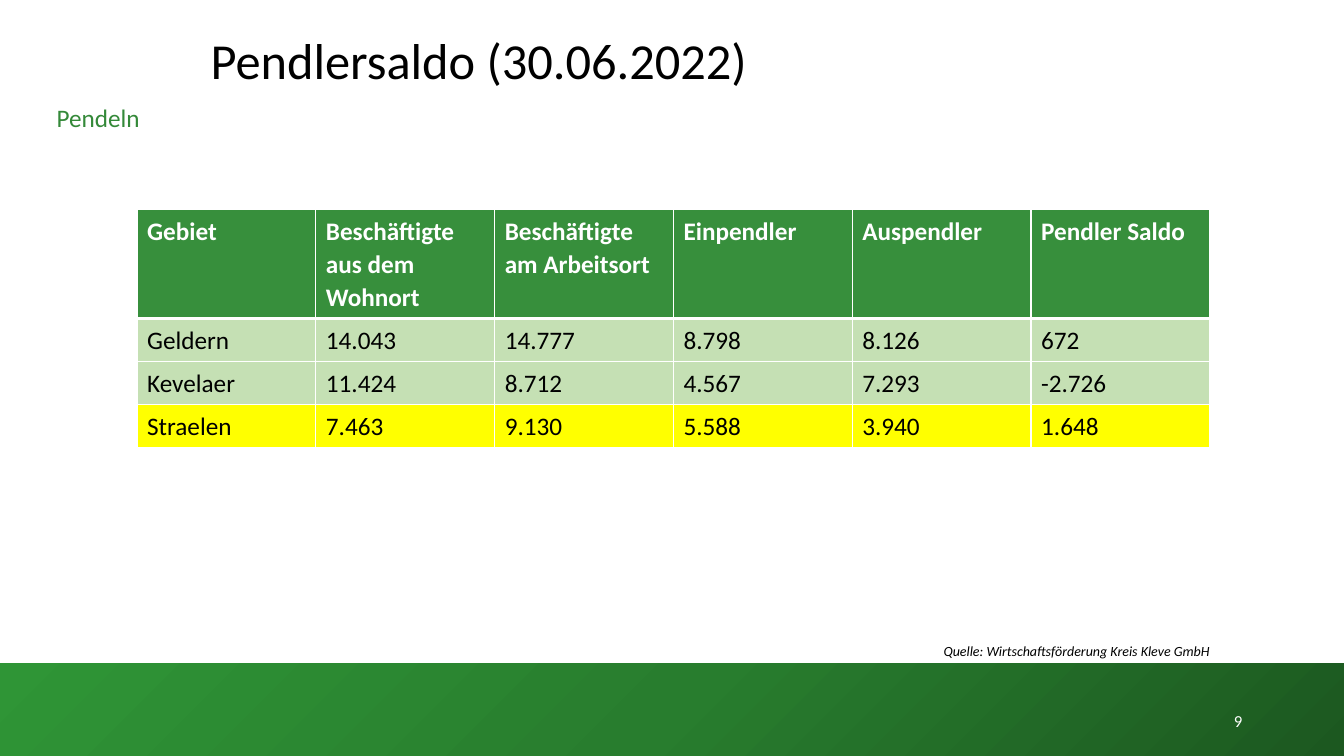
from dataclasses import dataclass
from copy import deepcopy

from lxml import etree
from pptx import Presentation
from pptx.dml.color import RGBColor
from pptx.enum.shapes import MSO_SHAPE
from pptx.enum.text import MSO_ANCHOR, PP_ALIGN
from pptx.oxml.ns import qn
from pptx.util import Inches, Pt

RECT = MSO_SHAPE.RECTANGLE
TOP, MIDDLE = MSO_ANCHOR.TOP, MSO_ANCHOR.MIDDLE
LEFT, CENTER, RIGHT = PP_ALIGN.LEFT, PP_ALIGN.CENTER, PP_ALIGN.RIGHT

FONT = "Calibri"
BLACK, WHITE = "000000", "FFFFFF"
HEAD, PALE, MARK = "378F3C", "C5E0B4", "FFFF00"


@dataclass
class Label:
    text: str
    box: tuple[float, float, float, float]
    size: float
    color: str = BLACK
    align: PP_ALIGN = LEFT
    anchor: MSO_ANCHOR = TOP
    italic: bool = False
    space: float = 1.0


@dataclass
class Row:
    cells: list[str]
    fill: str
    height: float = 0.42
    color: str = BLACK
    bold: bool = False


STOPS = [(0, "1C5820"), (0.5, "287D2E"), (1, "2F9536")]

LABELS = [
    Label("9", (9.42, 6.95, 3, 0.4), 12, WHITE, RIGHT, MIDDLE),
    Label("Pendlersaldo (30.06.2022)", (1.99, 0.31, 10.74, 0.87), 36, space=0.9),
    Label("Pendeln", (0.36, 0.97, 1.23, 0.4), 18, "348939", CENTER),
    Label("Quelle: Wirtschaftsförderung Kreis Kleve GmbH",
          (9.26, 6.33, 3.47, 0.27), 10, italic=True),
]

ROWS = [
    Row(["Gebiet", "Beschäftigte aus dem Wohnort", "Beschäftigte am Arbeitsort",
         "Einpendler", "Auspendler", "Pendler Saldo"], HEAD, 1.06, WHITE, True),
    Row(["Geldern", "14.043", "14.777", "8.798", "8.126", "672"], PALE),
    Row(["Kevelaer", "11.424", "8.712", "4.567", "7.293", "-2.726"], PALE),
    Row(["Straelen", "7.463", "9.130", "5.588", "3.940", "1.648"], MARK),
]


def rgb(code: str) -> RGBColor:
    return RGBColor.from_string(code)


def set_font(para, size: float, color: str, bold=False, italic=False) -> None:
    font = para.font
    font.name, font.size = FONT, Pt(size)
    font.bold, font.italic = bold, italic
    font.color.rgb = rgb(color)


def add_label(slide, label: Label) -> None:
    box = slide.shapes.add_textbox(*map(Inches, label.box))
    frame = box.text_frame
    frame.word_wrap = True
    frame.vertical_anchor = label.anchor
    para = frame.paragraphs[0]
    para.text = label.text
    para.alignment = label.align
    para.line_spacing = label.space
    set_font(para, label.size, label.color, italic=label.italic)


def add_band(slide) -> None:
    band = slide.shapes.add_shape(RECT, 0, Inches(6.58), Inches(13.33), Inches(0.92))
    band.shadow.inherit = False
    band.line.fill.background()
    band.fill.gradient()
    # A new gradient has two stops; the band needs three
    stops = band._element.spPr.find(".//" + qn("a:gsLst"))
    stops.append(deepcopy(stops[0]))
    for stop, (place, color) in zip(band.fill.gradient_stops, STOPS):
        stop.position = place
        stop.color.rgb = rgb(color)
    band.fill.gradient_angle = 135


def add_edges(cell, top: float, bottom: float) -> None:
    props = cell._tc.get_or_add_tcPr()
    widths = {"lnL": 1, "lnR": 1, "lnT": top, "lnB": bottom}
    for spot, (tag, width) in enumerate(widths.items()):
        line = etree.Element(qn("a:" + tag), w=str(Pt(width)))
        fill = etree.SubElement(line, qn("a:solidFill"))
        etree.SubElement(fill, qn("a:srgbClr"), val=WHITE)
        props.insert(spot, line)


def add_grid(slide, rows: list[Row]) -> None:
    height = sum(row.height for row in rows)
    frame = slide.shapes.add_table(len(rows), len(rows[0].cells), Inches(1.36),
                                   Inches(2.08), Inches(10.64), Inches(height))
    table = frame.table
    for y, row in enumerate(rows):
        table.rows[y].height = Inches(row.height)
        for x, text in enumerate(row.cells):
            cell = table.cell(y, x)
            cell.fill.solid()
            cell.fill.fore_color.rgb = rgb(row.fill)
            # The line below the header is heavier
            add_edges(cell, 3 if y == 1 else 1, 3 if y == 0 else 1)
            para = cell.text_frame.paragraphs[0]
            para.text = text
            para.line_spacing = 1.07
            para.space_after = Pt(8)
            set_font(para, 18, row.color, row.bold)


def main() -> None:
    deck = Presentation()
    deck.slide_width, deck.slide_height = Inches(13.33), Inches(7.5)
    slide = deck.slides.add_slide(deck.slide_layouts[6])

    # Footer band, table, then all text
    add_band(slide)
    add_grid(slide, ROWS)
    for label in LABELS:
        add_label(slide, label)
    deck.save("out.pptx")


if __name__ == "__main__":
    main()
